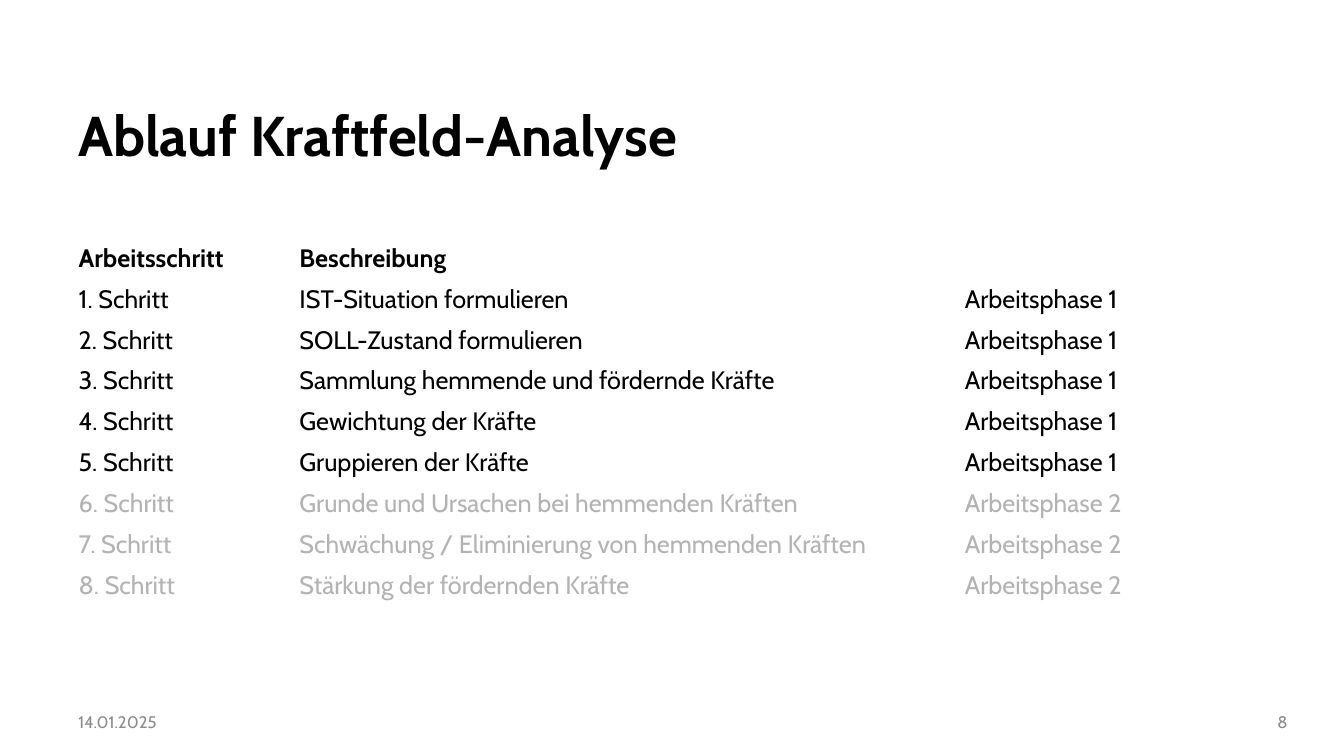
from pptx import Presentation
from pptx.dml.color import RGBColor
from pptx.enum.text import MSO_ANCHOR as Anchor, PP_ALIGN as Align
from pptx.util import Inches, Pt

TITLE = "Ablauf Kraftfeld-Analyse"
DATE = "14.01.2025"
PAGE = "8"
HEADINGS = ("Arbeitsschritt", "Beschreibung", "")
STEPS = [
    ("IST-Situation formulieren", 1),
    ("SOLL-Zustand formulieren", 1),
    ("Sammlung hemmende und fördernde Kräfte", 1),
    ("Gewichtung der Kräfte", 1),
    ("Gruppieren der Kräfte", 1),
    ("Grunde und Ursachen bei hemmenden Kräften", 2),
    ("Schwächung / Eliminierung von hemmenden Kräften", 2),
    ("Stärkung der fördernden Kräfte", 2),
]
FONT = "Cabin"
BLACK, GREY, FOOTER_GREY = "000000", "B3B3B3", "8C8C8C"
PHASE_COLORS = {1: BLACK, 2: GREY}
WIDTH, HEIGHT = 13.33, 7.5
LEFT = 0.68
FOOTER_TOP, FOOTER_WIDTH, FOOTER_HEIGHT = 6.97, 1.57, 0.39
PAGE_LEFT = 11.3
TABLE_TOP, TABLE_HEIGHT = 2.36, 3.65
COLUMN_WIDTHS = (2.19, 6.6, 2.74)


def add_run(paragraph, text, size, color, bold=False):
    run = paragraph.add_run()
    run.text = text
    run.font.name = FONT
    run.font.size = Pt(size)
    run.font.bold = bold
    run.font.color.rgb = RGBColor.from_string(color)


def add_text(slide, box, text, size, color, bold=False, align=Align.LEFT, anchor=Anchor.MIDDLE):
    shape = slide.shapes.add_textbox(*map(Inches, box))
    frame = shape.text_frame
    frame.word_wrap = True
    frame.vertical_anchor = anchor
    paragraph = frame.paragraphs[0]
    paragraph.alignment = align
    add_run(paragraph, text, size, color, bold)
    return paragraph


def add_steps_table(slide):
    rows = [(HEADINGS, BLACK, True)]
    for number, (description, phase) in enumerate(STEPS, 1):
        texts = (f"{number}. Schritt", description, f"Arbeitsphase {phase}")
        rows.append((texts, PHASE_COLORS[phase], False))
    box = (LEFT, TABLE_TOP, sum(COLUMN_WIDTHS), TABLE_HEIGHT)
    frame = slide.shapes.add_table(len(rows), len(COLUMN_WIDTHS), *map(Inches, box))
    table = frame.table
    table.first_row = table.horz_banding = False
    for column, width in zip(table.columns, COLUMN_WIDTHS):
        column.width = Inches(width)
    for row, (texts, color, bold) in zip(table.rows, rows):
        for cell, text in zip(row.cells, texts):
            cell.fill.background()
            if text:
                add_run(cell.text_frame.paragraphs[0], text, 18, color, bold)


def main():
    presentation = Presentation()
    presentation.slide_width = Inches(WIDTH)
    presentation.slide_height = Inches(HEIGHT)
    slide = presentation.slides.add_slide(presentation.slide_layouts[6])
    for text, left, align in ((DATE, LEFT, Align.LEFT), (PAGE, PAGE_LEFT, Align.RIGHT)):
        box = (left, FOOTER_TOP, FOOTER_WIDTH, FOOTER_HEIGHT)
        add_text(slide, box, text, 12, FOOTER_GREY, align=align)
    title_box = (LEFT, 1.02, 12.2, 0.79)
    title = add_text(slide, title_box, TITLE, 40, BLACK, bold=True, anchor=Anchor.TOP)
    title.line_spacing = 0.9
    add_steps_table(slide)
    presentation.save("out.pptx")


if __name__ == "__main__":
    main()
